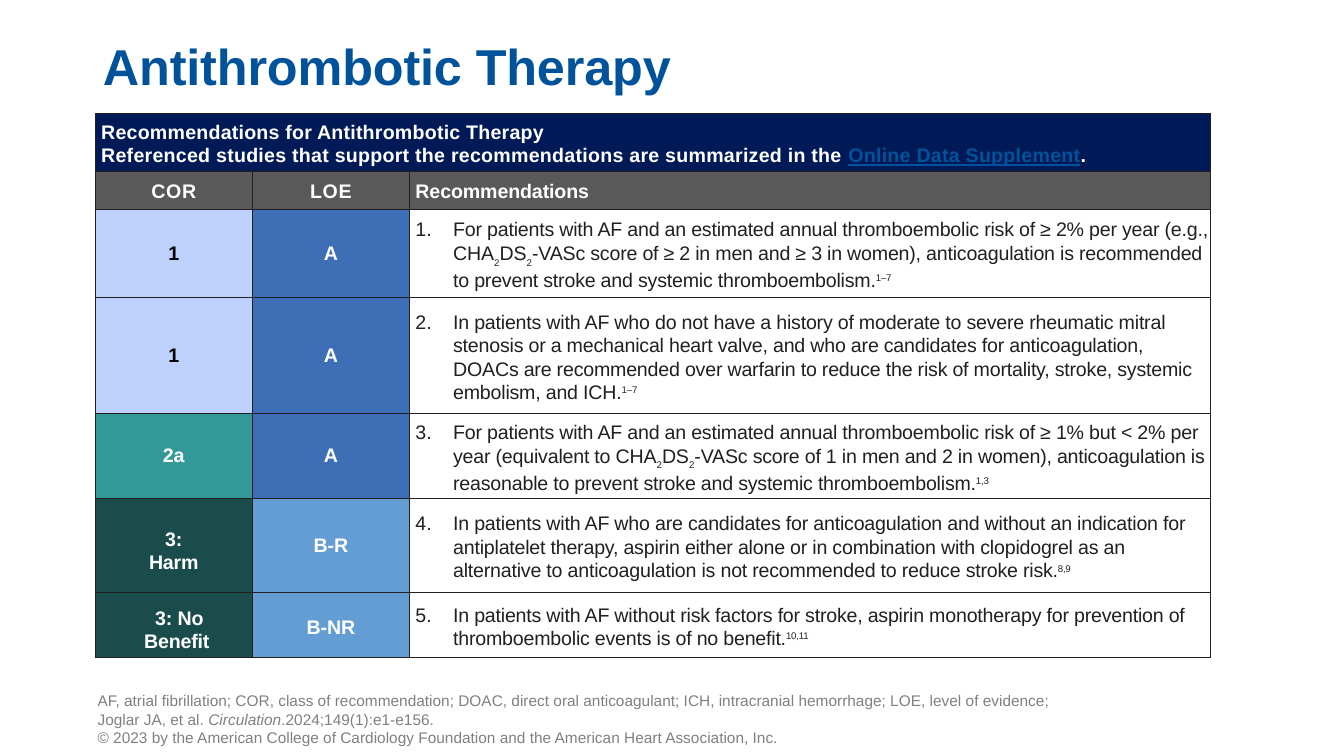
from dataclasses import dataclass

import pptx
import pptx.dml.color
import pptx.enum.text
import pptx.oxml
import pptx.oxml.ns
import pptx.util
from pptx.util import Cm, Pt

ALIGN = pptx.enum.text.PP_ALIGN
ANCHOR = pptx.enum.text.MSO_ANCHOR
FONT = "Arial"
COLORS = {
    "title": "00539B", "link": "00539B", "banner": "001A57", "header": "595959",
    "white": "FFFFFF", "black": "000000", "ink": "231F20", "note": "808080",
    "cor 1": "BED1FC", "cor 2a": "339898", "cor 3": "1A4C4C",
    "loe a": "3E6FB6", "loe b": "649DD4",
}


@dataclass
class Recommendation:
    cor: list[str]
    cor_fill: str
    loe: str
    loe_fill: str
    text: str  # parts split by "|": "_" subscript, "^" superscript
    height: float
    cor_color: str = "white"
    cor_top: float = 0
    loe_top: float = 0
    cor_indents: tuple[float, ...] = (0, 0)


RECOMMENDATIONS = [
    Recommendation(
        ["1"], "cor 1", "A", "loe a",
        "For patients with AF and an estimated annual thromboembolic risk of ≥ 2% per year "
        "(e.g., CHA|_2|DS|_2|-VASc score of ≥ 2 in men and ≥ 3 in women), anticoagulation is "
        "recommended to prevent stroke and systemic thromboembolism.|^1–7", 2.24, "black"),
    Recommendation(
        ["1"], "cor 1", "A", "loe a",
        "In patients with AF who do not have a history of moderate to severe rheumatic mitral "
        "stenosis or a mechanical heart valve, and who are candidates for anticoagulation, "
        "DOACs are recommended over warfarin to reduce the risk of mortality, stroke, systemic "
        "embolism, and ICH.|^1–7", 2.9, "black"),
    Recommendation(
        ["2a"], "cor 2a", "A", "loe a",
        "For patients with AF and an estimated annual thromboembolic risk of ≥ 1% but < 2% "
        "per year (equivalent to CHA|_2|DS|_2|-VASc score of 1 in men and 2 in women), "
        "anticoagulation is reasonable to prevent stroke and systemic thromboembolism.|^1,3", 2.16),
    Recommendation(
        ["3:", "Harm"], "cor 3", "B-R", "loe b",
        "In patients with AF who are candidates for anticoagulation and without an indication for "
        "antiplatelet therapy, aspirin either alone or in combination with clopidogrel as an "
        "alternative to anticoagulation is not recommended to reduce stroke risk.|^8,9", 2.36,
        cor_top=0.28),
    Recommendation(
        ["3: No", "Benefit"], "cor 3", "B-NR", "loe b",
        "In patients with AF without risk factors for stroke, aspirin monotherapy for prevention of "
        "thromboembolic events is of no benefit.|^10,11", 1.65,
        cor_top=0.25, loe_top=0.13, cor_indents=(0.28, 0.15)),
]
NOTES = [
    "AF, atrial fibrillation; COR, class of recommendation; DOAC, direct oral anticoagulant; "
    "ICH, intracranial hemorrhage; LOE, level of evidence;",
    "Joglar JA, et al. |/Circulation|.2024;149(1):e1-e156.",
    "© 2023 by the American College of Cardiology Foundation and the American Heart Association, Inc.",
]
COLUMN_WIDTHS = [3.96, 3.96, 20.17]
BANNER_HEIGHT, HEADER_HEIGHT = 1.47, 0.94


def rgb(name: str) -> pptx.dml.color.RGBColor:
    return pptx.dml.color.RGBColor.from_string(COLORS[name])


def write(p, text: str, size: float, color: str, bold: bool = False, spacing: float = 0) -> None:
    """Fill a paragraph; a part's first character may mark its style."""
    p.font.name, p.font.size, p.font.bold = FONT, Pt(size), bold
    p.font.color.rgb = rgb(color)
    for part in text.split("|"):
        mark = part[0] if part[0] in "_^~/" else ""
        r = p.add_run()
        r.text = part[len(mark):]
        props = r._r.get_or_add_rPr()
        if spacing:
            props.set("spc", str(round(spacing * 100)))
        if mark in ("_", "^"):
            r.font.size = Pt(12)
            props.set("baseline", "35000" if mark == "^" else "-35000")
        elif mark == "~":
            r.font.underline = True
            r.font.color.rgb = rgb("link")
        elif mark == "/":
            r.font.italic = True


def indent(p, left: float, first: float = 0) -> None:
    props = p._p.get_or_add_pPr()
    props.set("marL", str(Cm(left)))
    props.set("indent", str(Cm(first)))


def number(p, start: int) -> None:
    bullet = pptx.oxml.parse_xml(
        f'<a:buAutoNum {pptx.oxml.ns.nsdecls("a")} type="arabicPeriod" startAt="{start}"/>')
    p._p.get_or_add_pPr().append(bullet)


def format_cell(cell, fill: str | None, top: float = 0) -> None:
    cell.vertical_anchor = ANCHOR.MIDDLE
    cell.margin_left = cell.margin_right = cell.margin_bottom = 0
    cell.margin_top = Cm(top)
    if fill:
        cell.fill.solid()
        cell.fill.fore_color.rgb = rgb(fill)
    else:
        cell.fill.background()
    for i, side in enumerate("LRTB"):
        border = pptx.oxml.parse_xml(
            f'<a:ln{side} {pptx.oxml.ns.nsdecls("a")} w="{Pt(0.25)}"><a:solidFill>'
            f'<a:srgbClr val="{COLORS["ink"]}"/></a:solidFill></a:ln{side}>')
        cell._tc.get_or_add_tcPr().insert(i, border)


def write_label(cell, lines: list[str], color: str, spacing: float = 0,
                indents: tuple[float, ...] = (0, 0)) -> None:
    tf = cell.text_frame
    for i, line in enumerate(lines):
        p = tf.add_paragraph() if i else tf.paragraphs[0]
        p.alignment = ALIGN.CENTER
        indent(p, indents[i])
        if i:
            p.space_before = Pt(0.6)
        write(p, line, 14, color, True, spacing)


def add_title(slide) -> None:
    sp = slide.shapes.title
    sp.left, sp.top, sp.width, sp.height = Cm(2.34), Cm(0.48), Cm(29.21), Cm(2.08)
    sp.text_frame.vertical_anchor = ANCHOR.BOTTOM
    p = sp.text_frame.paragraphs[0]
    p.alignment, p.line_spacing = ALIGN.LEFT, 0.9
    write(p, "Antithrombotic Therapy", 36, "title", True, -0.1)


def add_recommendation_table(slide) -> None:
    heights = [BANNER_HEIGHT, HEADER_HEIGHT] + [rec.height for rec in RECOMMENDATIONS]
    table = slide.shapes.add_table(
        len(heights), len(COLUMN_WIDTHS), Cm(2.4), Cm(2.85),
        Cm(sum(COLUMN_WIDTHS)), Cm(sum(heights))).table
    table.first_row = table.horz_banding = False
    for column, width in zip(table.columns, COLUMN_WIDTHS):
        column.width = Cm(width)
    for row, height in zip(table.rows, heights):
        row.height = Cm(height)

    # Banner and column heads
    for c in range(3):
        format_cell(table.cell(0, c), "banner", 0.1)
        format_cell(table.cell(1, c), "header", 0.1)
    banner = table.cell(0, 0)
    banner.merge(table.cell(0, 2))
    p = banner.text_frame.paragraphs[0]
    indent(p, 0.15)
    write(p, "Recommendations for Antithrombotic Therapy", 14, "white", True, 0.15)
    p = banner.text_frame.add_paragraph()
    indent(p, 0.15)
    p.line_spacing = 1.07
    write(p, "Referenced studies that support the recommendations are summarized in the "
             "|~Online Data Supplement|.", 14, "white", True, 0.18)
    write_label(table.cell(1, 0), ["COR"], "white", 0.5)
    write_label(table.cell(1, 1), ["LOE"], "white", 0.4)
    p = table.cell(1, 2).text_frame.paragraphs[0]
    indent(p, 0.15)
    write(p, "Recommendations", 14, "white", True, -0.1)

    # One row per recommendation
    for i, rec in enumerate(RECOMMENDATIONS, 1):
        cor, loe, advice = (table.cell(i + 1, c) for c in range(3))
        format_cell(cor, rec.cor_fill, rec.cor_top)
        write_label(cor, rec.cor, rec.cor_color, -0.15, rec.cor_indents)
        format_cell(loe, rec.loe_fill, rec.loe_top)
        write_label(loe, [rec.loe], "white", -0.15)
        format_cell(advice, None, 0.08)
        p = advice.text_frame.paragraphs[0]
        indent(p, 1.1, -0.95)
        number(p, i)
        p.line_spacing = 1.07
        write(p, rec.text, 14, "ink", spacing=-0.18)


def add_notes_line(slide) -> None:
    tf = slide.shapes.add_textbox(Cm(2.36), Cm(17.35), Cm(24.69), Cm(1.6)).text_frame
    tf.word_wrap = True
    tf.vertical_anchor = ANCHOR.BOTTOM
    tf.margin_left = tf.margin_right = Cm(0.1)
    for i, note in enumerate(NOTES):
        write(tf.add_paragraph() if i else tf.paragraphs[0], note, 11, "note")


def main() -> None:
    prs = pptx.Presentation()
    prs.slide_width, prs.slide_height = Cm(33.87), Cm(19.05)
    slide = prs.slides.add_slide(prs.slide_layouts[5])
    add_recommendation_table(slide)
    add_notes_line(slide)
    add_title(slide)
    prs.save("out.pptx")


if __name__ == "__main__":
    main()
